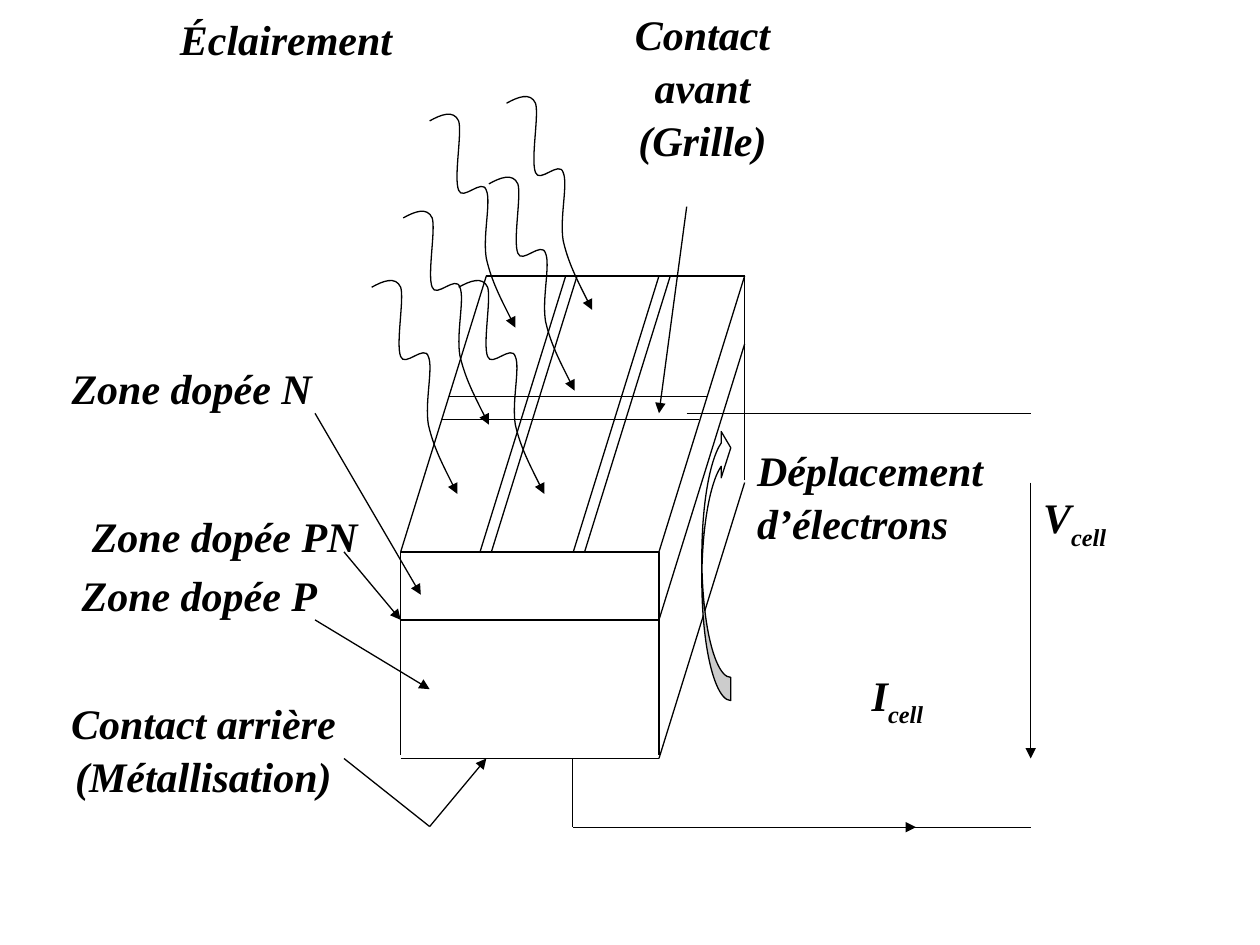
from dataclasses import dataclass
from typing import NamedTuple

import pptx
import pptx.dml.color
import pptx.enum.shapes
import pptx.enum.text
import pptx.oxml.ns
import pptx.util
from lxml import etree

Inches = pptx.util.Inches
qn = pptx.oxml.ns.qn
ALIGN = pptx.enum.text.PP_ALIGN


@dataclass(frozen=True)
class Theme:
    ink: pptx.dml.color.RGBColor = pptx.dml.color.RGBColor(0, 0, 0)
    paper: pptx.dml.color.RGBColor = pptx.dml.color.RGBColor(255, 255, 255)
    font: str = "Times New Roman"
    size: float = 24
    line: float = 0.75


class Point(NamedTuple):
    x: float
    y: float


class Wire(NamedTuple):
    start: Point
    end: Point
    arrow: bool = False


class Label(NamedTuple):
    text: str
    box: tuple[float, float, float, float]
    sub: str = ""
    align: ALIGN = ALIGN.LEFT


THEME = Theme()

# Solar cell block: front face and the shift to its back edge
LEFT, RIGHT = 3.18, 5.23
TOP, JOINT, BASE = 4.38, 4.92, 6.02
DEPTH = Point(0.68, -2.19)


def back(x: float, y: float) -> Wire:
    return Wire(Point(x, y), Point(x + DEPTH.x, y + DEPTH.y))


def across(x: float, y: float) -> Wire:
    return Wire(Point(x, y), Point(x + RIGHT - LEFT, y))


BLOCK = (
    [across(LEFT, y) for y in (TOP, JOINT, BASE)]
    + [across(LEFT + DEPTH.x, TOP + DEPTH.y)]
    + [back(RIGHT, y) for y in (TOP, JOINT, BASE)]
    + [back(LEFT, TOP)]
    + [Wire(Point(x, BASE - 0.03), Point(x, TOP)) for x in (LEFT, RIGHT)]
    + [Wire(Point(5.91, 3.81), Point(5.91, 2.19))]
)
GRID = [across(3.5, 3.33), across(3.56, 3.145)] + [
    back(x, TOP) for x in (3.81, 3.9, 4.55, 4.64)
]

CIRCUIT = [
    Wire(Point(5.45, 3.28), Point(8.18, 3.28)),
    Wire(Point(4.545, 6.02), Point(4.545, 6.565)),
    Wire(Point(4.545, 6.565), Point(8.18, 6.565)),
    Wire(Point(8.18, 3.83), Point(8.18, 6.02), True),
    Wire(Point(6.82, 6.565), Point(7.27, 6.565), True),
]
LEADERS = [
    Wire(Point(2.73, 4.38), Point(3.18, 4.92), True),
    Wire(Point(2.5, 4.92), Point(3.41, 5.47), True),
    Wire(Point(2.5, 3.28), Point(3.34, 4.72), True),
    Wire(Point(2.73, 6.02), Point(3.41, 6.56)),
    Wire(Point(3.41, 6.56), Point(3.86, 6.02), True),
    Wire(Point(5.45, 1.64), Point(5.23, 3.28), True),
]

# Light rays: start points, and the control points of one ray
RAYS = [Point(3.41, 0.96), Point(3.2, 1.73), Point(2.95, 2.28),
        Point(4.02, 0.82), Point(3.88, 1.46), Point(3.64, 2.28)]
WAVE = [
    Point(0.09, -0.05), Point(0.19, -0.09), Point(0.23, 0),
    Point(0.26, 0.09), Point(0.19, 0.45), Point(0.23, 0.55),
    Point(0.26, 0.64), Point(0.42, 0.45), Point(0.45, 0.55),
    Point(0.49, 0.64), Point(0.42, 0.91), Point(0.45, 1.09),
    Point(0.49, 1.27), Point(0.59, 1.46), Point(0.68, 1.64),
]

LABELS = [
    Label("Zone dopée N", (0.47, 2.81, 2.27, 1.64)),
    Label("Zone dopée PN", (0.63, 3.98, 3.12, 1.78)),
    Label("Zone dopée P", (0.55, 4.45, 2.36, 1.32)),
    Label("Déplacement d’électrons", (5.91, 3.46, 2.05, 2.19)),
    Label("Contact avant (Grille)", (4.55, 0, 2.05, 2.19), align=ALIGN.CENTER),
    Label("Contact arrière (Métallisation)", (0.03, 5.47, 3.17, 2.19),
          align=ALIGN.CENTER),
    Label("V", (8.18, 3.83, 1.36, 1.64), "cell"),
    Label("I", (6.82, 5.24, 1.36, 1.64), "cell"),
    Label("Éclairement", (1.33, 0.04, 2.23, 1.64)),
]


def stroke(shape, arrow: bool = False) -> None:
    shape.line.color.rgb = THEME.ink
    shape.line.width = pptx.util.Pt(THEME.line)
    if arrow:
        line = shape.line._get_or_add_ln()
        etree.SubElement(line, qn("a:tailEnd"), type="triangle")


def draw(shapes, wire: Wire) -> None:
    ends = [Inches(n) for n in (*wire.start, *wire.end)]
    link = shapes.add_connector(pptx.enum.shapes.MSO_CONNECTOR.STRAIGHT, *ends)
    stroke(link, wire.arrow)
    etree.SubElement(link._element.spPr, qn("a:effectLst"))


def ray(shapes, start: Point) -> None:
    pen = shapes.build_freeform(Inches(start.x), Inches(start.y))
    pen.add_line_segments(
        [(Inches(start.x + p.x), Inches(start.y + p.y)) for p in WAVE],
        close=False,
    )
    shape = pen.convert_to_shape()
    shape.shadow.inherit = False
    shape.fill.background()
    stroke(shape, arrow=True)
    # Regroup each three points into one Bézier curve
    track = next(shape._element.iter(qn("a:path")))
    steps = track.findall(qn("a:lnTo"))
    for i in range(0, len(steps), 3):
        curve = etree.SubElement(track, qn("a:cubicBezTo"))
        for step in steps[i:i + 3]:
            curve.append(step[0])
            track.remove(step)


def flow(shapes) -> None:
    shape = shapes.add_shape(
        pptx.enum.shapes.MSO_SHAPE.CURVED_LEFT_ARROW,
        Inches(5.57), Inches(3.37), Inches(0.23), Inches(2.19),
    )
    shape.rotation = 180
    for i, value in enumerate((0.8, 1.6, 0.333)):
        shape.adjustments[i] = value
    shape.shadow.inherit = False
    shape.fill.solid()
    shape.fill.fore_color.rgb = THEME.paper
    stroke(shape)


def write(shapes, text: str, *, box: tuple[float, float, float, float],
          sub: str = "", align: ALIGN = ALIGN.LEFT) -> None:
    frame = shapes.add_textbox(*(Inches(n) for n in box)).text_frame
    frame.word_wrap = True
    para = frame.paragraphs[0]
    para.alignment = align
    para.line_spacing = 1.05
    for part, base in ((text, 0), (sub, -30000)):
        if not part:
            continue
        run = para.add_run()
        run.text = part
        font = run.font
        font.name, font.size = THEME.font, pptx.util.Pt(THEME.size)
        font.bold = font.italic = True
        font.color.rgb = THEME.ink
        if base:
            run._r.get_or_add_rPr().set("baseline", str(base))


def main() -> None:
    deck = pptx.Presentation()
    deck.slide_width, deck.slide_height = Inches(10), Inches(7.5)
    slide = deck.slides.add_slide(deck.slide_layouts[6])
    shapes = slide.shapes.add_group_shape().shapes
    for wire in BLOCK + GRID:
        draw(shapes, wire)
    flow(shapes)
    for wire in CIRCUIT + LEADERS:
        draw(shapes, wire)
    for start in RAYS:
        ray(shapes, start)
    for label in LABELS:
        write(shapes, label.text, box=label.box, sub=label.sub, align=label.align)
    deck.save("out.pptx")


if __name__ == "__main__":
    main()
